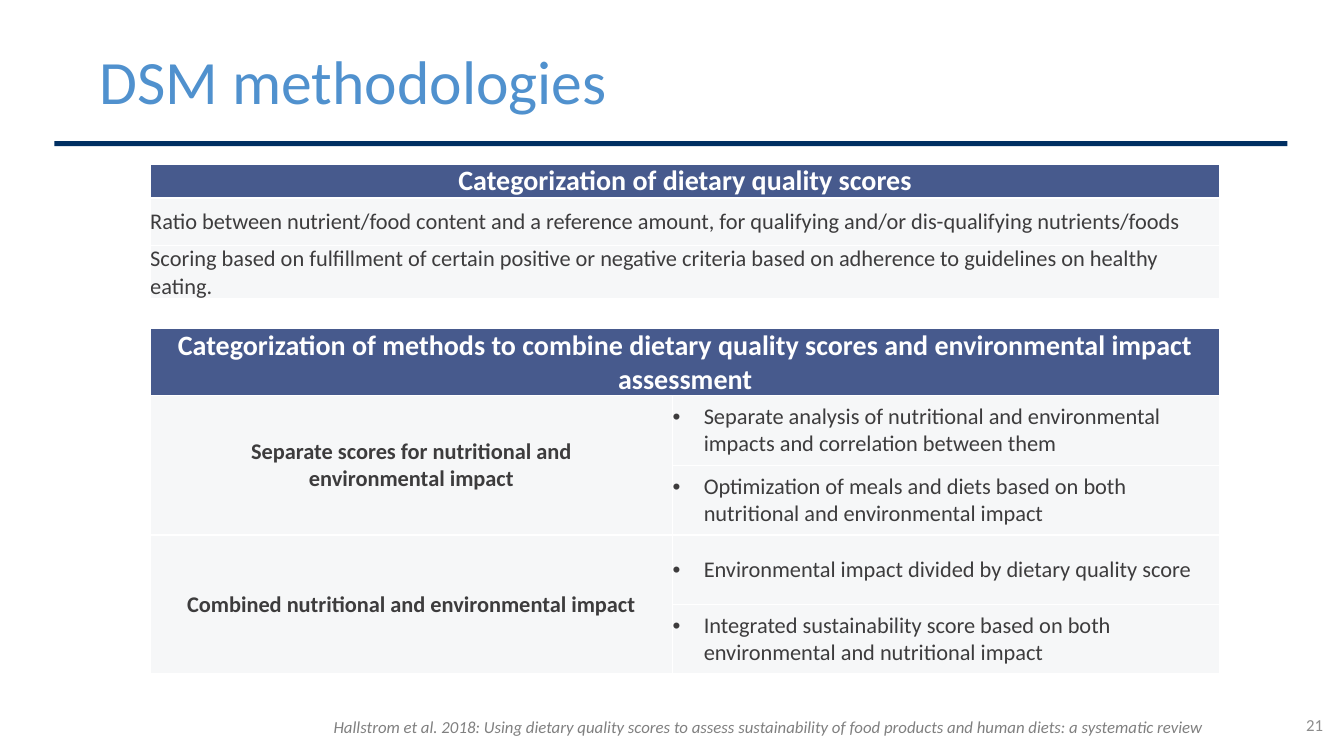
from dataclasses import dataclass

from lxml.etree import SubElement
from pptx import Presentation
from pptx.dml.color import RGBColor
from pptx.enum.shapes import MSO_SHAPE
from pptx.enum.text import MSO_ANCHOR, PP_ALIGN
from pptx.oxml.ns import qn
from pptx.util import Inches, Pt


@dataclass(frozen=True)
class Theme:
    face: str = "Calibri"
    title: str = "5091CE"
    rule: str = "002F62"
    head: str = "475A8D"
    body: str = "F6F7F8"
    white: str = "FFFFFF"
    ink: str = "3D3C3D"
    cite: str = "808080"
    page: str = "8C8C8C"
    big: int = 44
    mid: int = 20
    text: int = 16
    small: int = 12


THEME = Theme()
HEAD = {"size": THEME.mid, "color": THEME.white, "bold": True}
BODY = {"size": THEME.text, "color": THEME.ink, "bold": False}
LABEL = BODY | {"bold": True}

SCORES = [
    "Ratio between nutrient/food content and a reference amount, "
    "for qualifying and/or dis-qualifying nutrients/foods",
    "Scoring based on fulfillment of certain positive or negative criteria "
    "based on adherence to guidelines on healthy eating.",
]
METHODS = [
    (["Separate scores for nutritional and", "environmental impact"],
     ["Separate analysis of nutritional and environmental impacts "
      "and correlation between them",
      "Optimization of meals and diets based on both nutritional "
      "and environmental impact"]),
    (["Combined nutritional and environmental impact"],
     ["Environmental impact divided by dietary quality score",
      "Integrated sustainability score based on both environmental "
      "and nutritional impact"]),
]


def set_font(font, form):
    values = {"name": THEME.face} | form
    values["size"] = Pt(values["size"])
    font.color.rgb = RGBColor.from_string(values.pop("color"))
    for key, value in values.items():
        setattr(font, key, value)


def add_dot(para):
    props = para._p.get_or_add_pPr()
    props.set("marL", str(Inches(0.31)))
    props.set("indent", str(Inches(-0.31)))
    SubElement(props, qn("a:buFont"), typeface="Arial")
    SubElement(props, qn("a:buChar"), char="•")


def write(frame, lines, form, align=PP_ALIGN.LEFT, dot=False):
    for i, line in enumerate(lines):
        para = frame.add_paragraph() if i else frame.paragraphs[0]
        para.alignment = align
        if dot:
            add_dot(para)
        run = para.add_run()
        run.text = line
        set_font(run.font, form)


def add_text(slide, area, line, form, align=PP_ALIGN.LEFT):
    frame = slide.shapes.add_textbox(*map(Inches, area)).text_frame
    frame.word_wrap = True
    frame.vertical_anchor = MSO_ANCHOR.MIDDLE
    write(frame, [line], form, align)


def add_rule(slide, area):
    bar = slide.shapes.add_shape(MSO_SHAPE.RECTANGLE, *map(Inches, area))
    bar.shadow.inherit = False
    bar.fill.solid()
    bar.fill.fore_color.rgb = RGBColor.from_string(THEME.rule)
    bar.line.fill.background()


def add_grid(slide, top, cols, rows):
    """Plain table with a dark first row and pale rows below."""
    area = (1.49, top, sum(cols), sum(rows))
    table = slide.shapes.add_table(len(rows), len(cols), *map(Inches, area)).table
    table.horz_banding = False
    for col, width in zip(table.columns, cols):
        col.width = Inches(width)
    for i, (row, height) in enumerate(zip(table.rows, rows)):
        row.height = Inches(height)
        for cell in row.cells:
            cell.fill.solid()
            tint = THEME.body if i else THEME.head
            cell.fill.fore_color.rgb = RGBColor.from_string(tint)
            cell.vertical_anchor = MSO_ANCHOR.MIDDLE
            for side in ("left", "right", "top", "bottom"):
                setattr(cell, f"margin_{side}", 0)
    return table


def add_scores(slide):
    table = add_grid(slide, 1.63, [10.61], [0.27, 0.47, 0.47])
    head = table.cell(0, 0)
    head.vertical_anchor = MSO_ANCHOR.BOTTOM
    write(head.text_frame, ["Categorization of dietary quality scores"],
          HEAD, PP_ALIGN.CENTER)
    for i, line in enumerate(SCORES, 1):
        write(table.cell(i, 0).text_frame, [line], BODY)


def add_methods(slide):
    table = add_grid(slide, 3.26, [5.18, 5.43], [0.39] + [0.69] * 4)
    head = table.cell(0, 0)
    head.merge(table.cell(0, 1))
    write(head.text_frame,
          ["Categorization of methods to combine dietary quality scores "
           "and environmental impact assessment"], HEAD, PP_ALIGN.CENTER)
    row = 1
    for label, items in METHODS:
        cell = table.cell(row, 0)
        cell.merge(table.cell(row + len(items) - 1, 0))
        write(cell.text_frame, label, LABEL, PP_ALIGN.CENTER)
        for item in items:
            write(table.cell(row, 1).text_frame, [item], BODY, dot=True)
            row += 1


def main():
    deck = Presentation()
    deck.slide_width, deck.slide_height = Inches(13.33), Inches(7.5)
    slide = deck.slides.add_slide(deck.slide_layouts[6])

    # Title and rule
    add_rule(slide, (0.54, 1.4, 12.23, 0.05))
    add_text(slide, (0.89, 0.25, 11.89, 1.08), "DSM methodologies",
             {"size": THEME.big, "color": THEME.title})

    # Tables
    add_methods(slide)
    add_scores(slide)

    # Source and page number
    add_text(slide, (3.21, 7, 9.62, 0.42),
             "Hallstrom et al. 2018: Using dietary quality scores to assess "
             "sustainability of food products and human diets: a systematic review",
             {"size": THEME.small, "color": THEME.cite, "italic": True})
    add_text(slide, (12.8, 6.99, 0.42, 0.4), "21",
             {"size": THEME.small, "color": THEME.page}, PP_ALIGN.RIGHT)

    deck.save("out.pptx")


if __name__ == "__main__":
    main()
